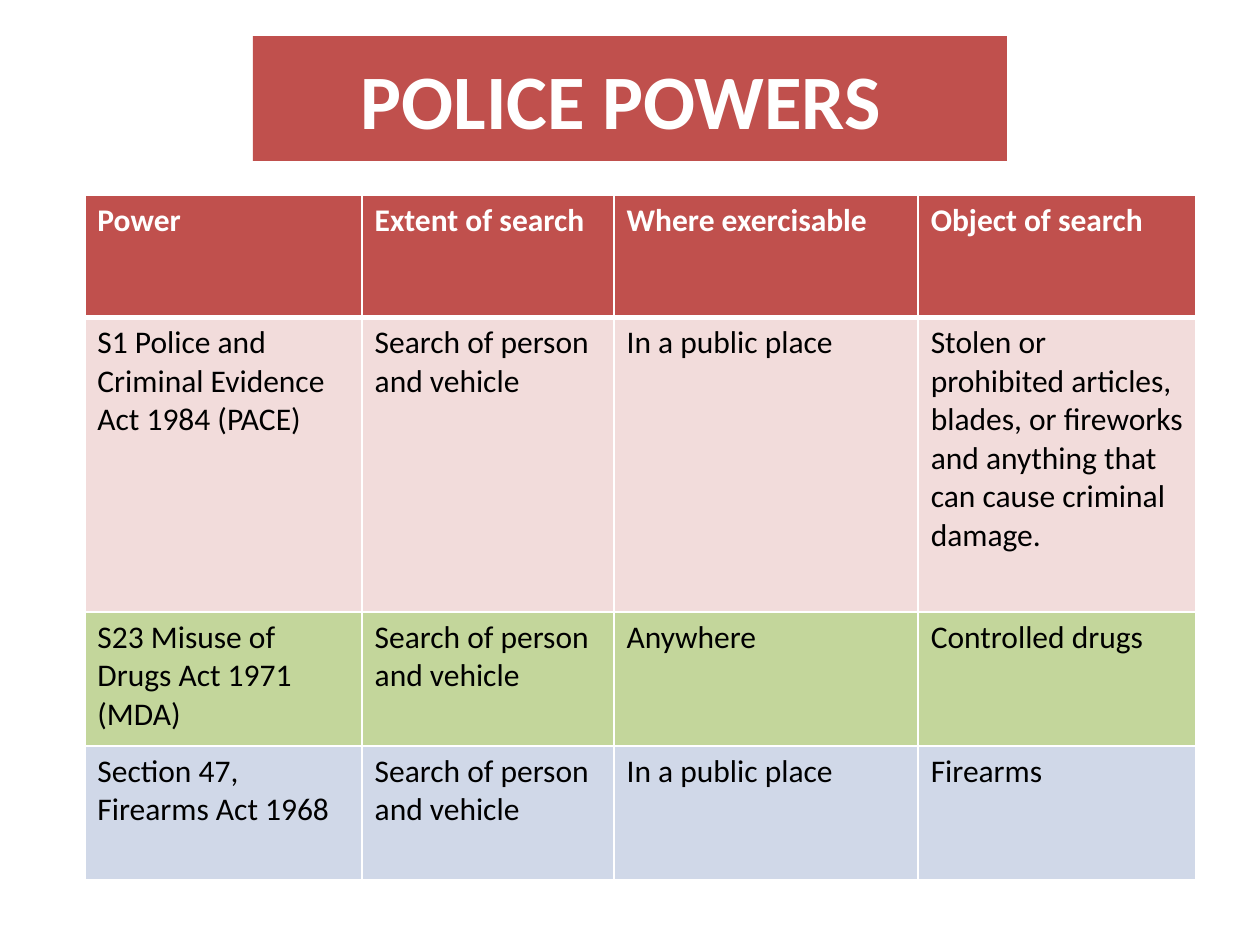
import pptx
import pptx.util
import pptx.dml.color
import pptx.enum.text
import pptx.enum.shapes
import pptx.oxml.ns
import lxml.etree

Pt = pptx.util.Pt

# Content
TITLE = "POLICE POWERS "
ROWS = [
    ("Power", "Extent of search", "Where exercisable", "Object of search"),
    ("S1 Police and Criminal Evidence Act 1984 (PACE)",
     "Search of person and vehicle", "In a public place",
     "Stolen or prohibited articles, blades, or fireworks and anything "
     "that can cause criminal damage."),
    ("S23 Misuse of Drugs Act 1971 (MDA)",
     "Search of person and vehicle", "Anywhere", "Controlled drugs"),
    ("Section 47, Firearms Act 1968",
     "Search of person and vehicle", "In a public place", "Firearms"),
]
COLORS = {"red": "C0504D", "pink": "F2DCDB", "green": "C3D69B",
          "blue": "D0D8E8", "white": "FFFFFF", "black": "000000"}
FILLS = ["red", "pink", "green", "blue"]
WIDTHS = [158.4, 144, 173.8, 158.8]
HEIGHTS = [70, 168.4, 76.4, 76.4]


def paint(fill, name):
    fill.solid()
    fill.fore_color.rgb = pptx.dml.color.RGBColor.from_string(COLORS[name])


def style(frame, size, color, bold):
    for run in frame.paragraphs[0].runs:
        font = run.font
        font.name, font.size, font.bold = "Calibri", Pt(size), bold
        font.color.rgb = pptx.dml.color.RGBColor.from_string(COLORS[color])


def border(cell, sides):
    """Add white cell edges, which must stand before the cell's fill."""
    props = cell._tc.get_or_add_tcPr()
    qn = pptx.oxml.ns.qn
    for i, (side, width) in enumerate(sides.items()):
        line = lxml.etree.Element(qn("a:ln" + side), w=str(Pt(width)))
        fill = lxml.etree.SubElement(line, qn("a:solidFill"))
        lxml.etree.SubElement(fill, qn("a:srgbClr"), val=COLORS["white"])
        props.insert(i, line)


deck = pptx.Presentation()
deck.slide_width, deck.slide_height = Pt(720), Pt(540)
slide = deck.slides.add_slide(deck.slide_layouts[6])

# Title banner
banner = slide.shapes.add_shape(
    pptx.enum.shapes.MSO_SHAPE.RECTANGLE, Pt(144.6), Pt(20.6), Pt(430.8), Pt(71.4))
banner.shadow.inherit = False
paint(banner.fill, "red")
banner.line.fill.background()
frame = banner.text_frame
frame.text = TITLE
frame.word_wrap = True
frame.vertical_anchor = pptx.enum.text.MSO_ANCHOR.MIDDLE
frame.paragraphs[0].alignment = pptx.enum.text.PP_ALIGN.CENTER
style(frame, 44, "white", True)

# Table of powers
table = slide.shapes.add_table(
    len(ROWS), len(WIDTHS), Pt(48.5), Pt(111.5),
    Pt(sum(WIDTHS)), Pt(sum(HEIGHTS))).table
for col, width in zip(table.columns, WIDTHS):
    col.width = Pt(width)
for r, row in enumerate(ROWS):
    table.rows[r].height = Pt(HEIGHTS[r])
    head = r == 0
    for c, text in enumerate(row):
        cell = table.cell(r, c)
        cell.text_frame.text = text
        style(cell.text_frame, 18, "white" if head else "black", head)
        paint(cell.fill, FILLS[r])
        border(cell, {"L": 1, "R": 1, "T": 3 if r == 1 else 1, "B": 3 if head else 1})

deck.save("out.pptx")
